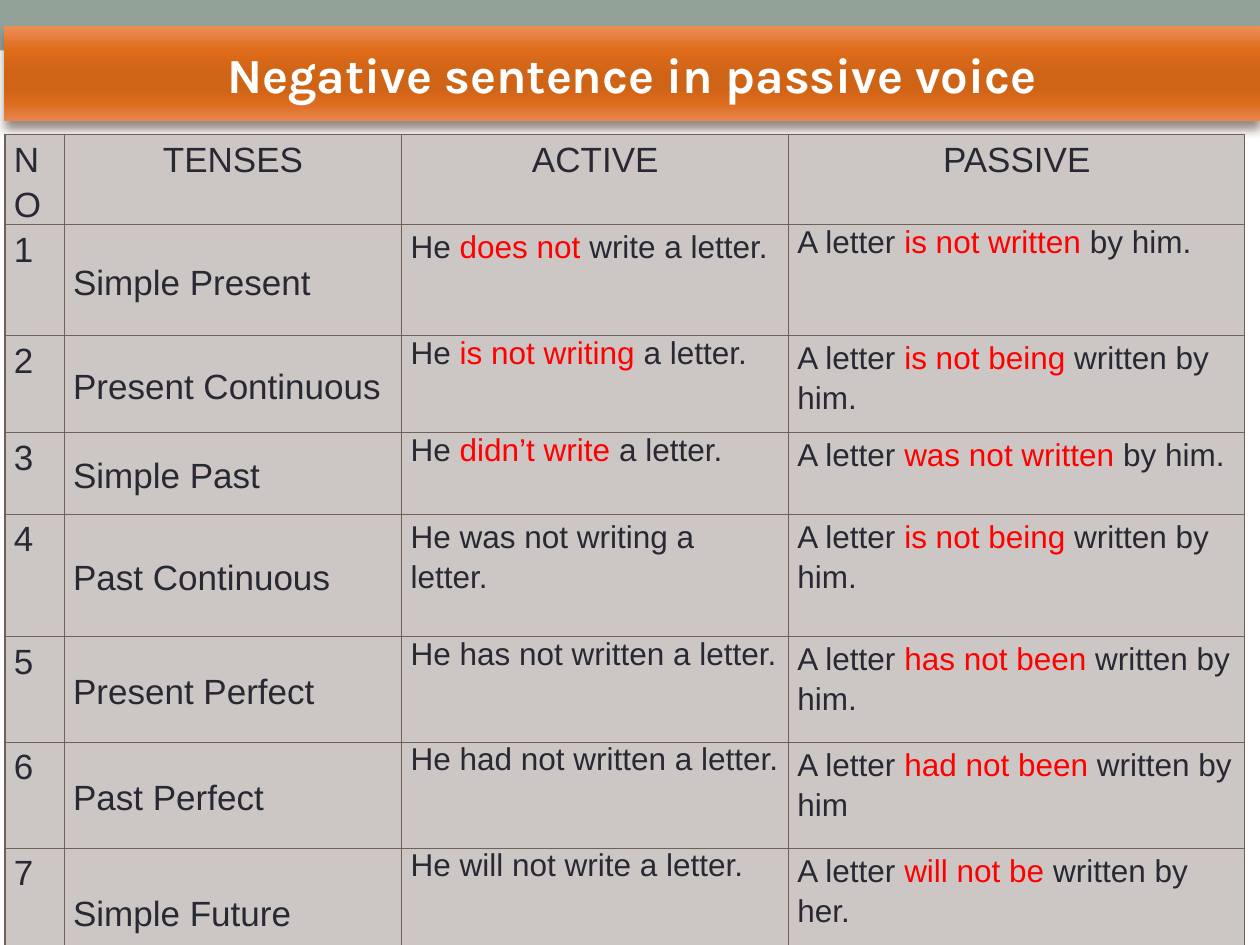
from lxml import etree
from pptx import Presentation
from pptx.dml.color import RGBColor
from pptx.enum.shapes import MSO_SHAPE
from pptx.enum.text import MSO_ANCHOR, MSO_AUTO_SIZE, PP_ALIGN
from pptx.util import Inches, Pt

RECT = MSO_SHAPE.RECTANGLE
TOP, MIDDLE = MSO_ANCHOR.TOP, MSO_ANCHOR.MIDDLE
LEFT, CENTER = PP_ALIGN.LEFT, PP_ALIGN.CENTER
NO_FIT = MSO_AUTO_SIZE.NONE
NS = 'xmlns:a="http://schemas.openxmlformats.org/drawingml/2006/main"'
WIDE, HIGH = Inches(10), Inches(7.5)

SAGE, WHITE, INK, RED = "93A299", "FFFFFF", "292934", "FF0000"
CELL, RULE, SHADE = "CCC7C5", "726056", "4E3B30"
GLOW = [(0, "ED8D56"), (25, "DF6C1B"), (50, "CF6316"),
        (65, "CF6316"), (80, "DC6B1C"), (100, "E7864D")]

COLS = [0.47, 2.68, 3.07, 3.62]
ROWS = [0.71, 0.88, 0.77, 0.65, 0.97, 0.84, 0.84, 1]
HEAD = ["NO", "TENSES", "ACTIVE", "PASSIVE"]
# Bars enclose the words set in red.
TENSES = [
    ("Simple Present", "He |does not| write a letter.",
     "A letter| is not written| by him."),
    ("Present Continuous", "He |is not writing |a letter.",
     "A letter |is not being| written by him."),
    ("Simple Past", "He |didn’t write |a letter.",
     "A letter |was not written |by him."),
    ("Past Continuous", "He was not writing a letter.",
     "A letter |is not being| written by him."),
    ("Present Perfect", "He has not written a letter.",
     "A letter |has not been| written by him."),
    ("Past Perfect", "He had not written a letter.",
     "A letter |had not been| written by him"),
    ("Simple Future", "He will not write a letter.",
     "A letter |will not be| written by her."),
]
# Cells (row, column) with single line spacing.
TIGHT = {(1, 3), (2, 2), (3, 2), (5, 2), (6, 2), (7, 2)}


def color(code):
    return RGBColor.from_string(code)


def add_xml(parent, xml):
    parent.append(etree.fromstring(xml))


def style(run, size, code, face="Arial", bold=False):
    font = run.font
    font.size, font.name, font.bold = Pt(size), face, bold
    font.color.rgb = color(code)


def add_band(slide, left, top, width, height):
    band = slide.shapes.add_shape(RECT, left, top, width, height)
    band.shadow.inherit = False
    band.fill.solid()
    band.fill.fore_color.rgb = color(SAGE)
    band.line.fill.background()
    slide.shapes.title._element.addprevious(band._element)


def set_title(slide, left, top, width, height):
    title = slide.shapes.title
    title.left, title.top, title.width, title.height = left, top, width, height
    stops = "".join(f'<a:gs pos="{pos * 1000}"><a:srgbClr val="{code}"/></a:gs>'
                    for pos, code in GLOW)
    props = title._element.spPr
    add_xml(props, f'<a:gradFill {NS} rotWithShape="1"><a:gsLst>{stops}</a:gsLst>'
                   '<a:lin ang="5400000" scaled="0"/></a:gradFill>')
    add_xml(props, f'<a:effectLst {NS}><a:outerShdw blurRad="{Pt(6)}" dist="{Pt(4)}" '
                   f'dir="5400000" rotWithShape="0"><a:srgbClr val="{SHADE}">'
                   '<a:alpha val="60000"/></a:srgbClr></a:outerShdw></a:effectLst>')
    frame = title.text_frame
    frame.text = "Negative sentence in passive voice"
    frame.word_wrap, frame.auto_size = True, NO_FIT
    frame.vertical_anchor = MIDDLE
    para = frame.paragraphs[0]
    para.alignment = CENTER
    style(para.runs[0], 28, WHITE, "Karla", True)


def fill_cell(cell, text, size, align, anchor, gap):
    props = cell._tc.get_or_add_tcPr()
    for side in "LRTB":
        add_xml(props, f'<a:ln{side} {NS} w="{Pt(0.75)}"><a:solidFill>'
                       f'<a:srgbClr val="{RULE}"/></a:solidFill></a:ln{side}>')
    cell.fill.solid()
    cell.fill.fore_color.rgb = color(CELL)
    cell.margin_left = cell.margin_right = Inches(0.07)
    cell.margin_top = cell.margin_bottom = 0
    cell.vertical_anchor = anchor
    para = cell.text_frame.paragraphs[0]
    para.alignment, para.line_spacing = align, gap
    for i, part in enumerate(text.split("|")):
        run = para.add_run()
        run.text = part
        style(run, size, RED if i % 2 else INK)


def add_grid(slide, left, top):
    data = [HEAD] + [(str(i), *row) for i, row in enumerate(TENSES, 1)]
    table = slide.shapes.add_table(len(ROWS), len(COLS), left, top,
                                   Inches(sum(COLS)), Inches(sum(ROWS))).table
    table.first_row = table.horz_banding = False
    for col, width in zip(table.columns, COLS):
        col.width = Inches(width)
    for r, texts in enumerate(data):
        table.rows[r].height = Inches(ROWS[r])
        for c, text in enumerate(texts):
            fill_cell(table.cell(r, c), text,
                      size=18 if r and c > 1 else 20,
                      align=CENTER if r == 0 and c else LEFT,
                      anchor=MIDDLE if r and c == 1 else TOP,
                      gap=1.0 if (r, c) in TIGHT else 1.15)


def main():
    deck = Presentation()
    deck.slide_width, deck.slide_height = WIDE, HIGH
    slide = deck.slides.add_slide(deck.slide_layouts[5])
    add_band(slide, 0, 0, WIDE, Inches(0.4))
    edge = Inches(0.03)
    set_title(slide, edge, Inches(0.21), WIDE - edge, HIGH // 10)
    add_grid(slide, Inches(0.04), Inches(1.07))
    deck.save("out.pptx")


if __name__ == "__main__":
    main()
